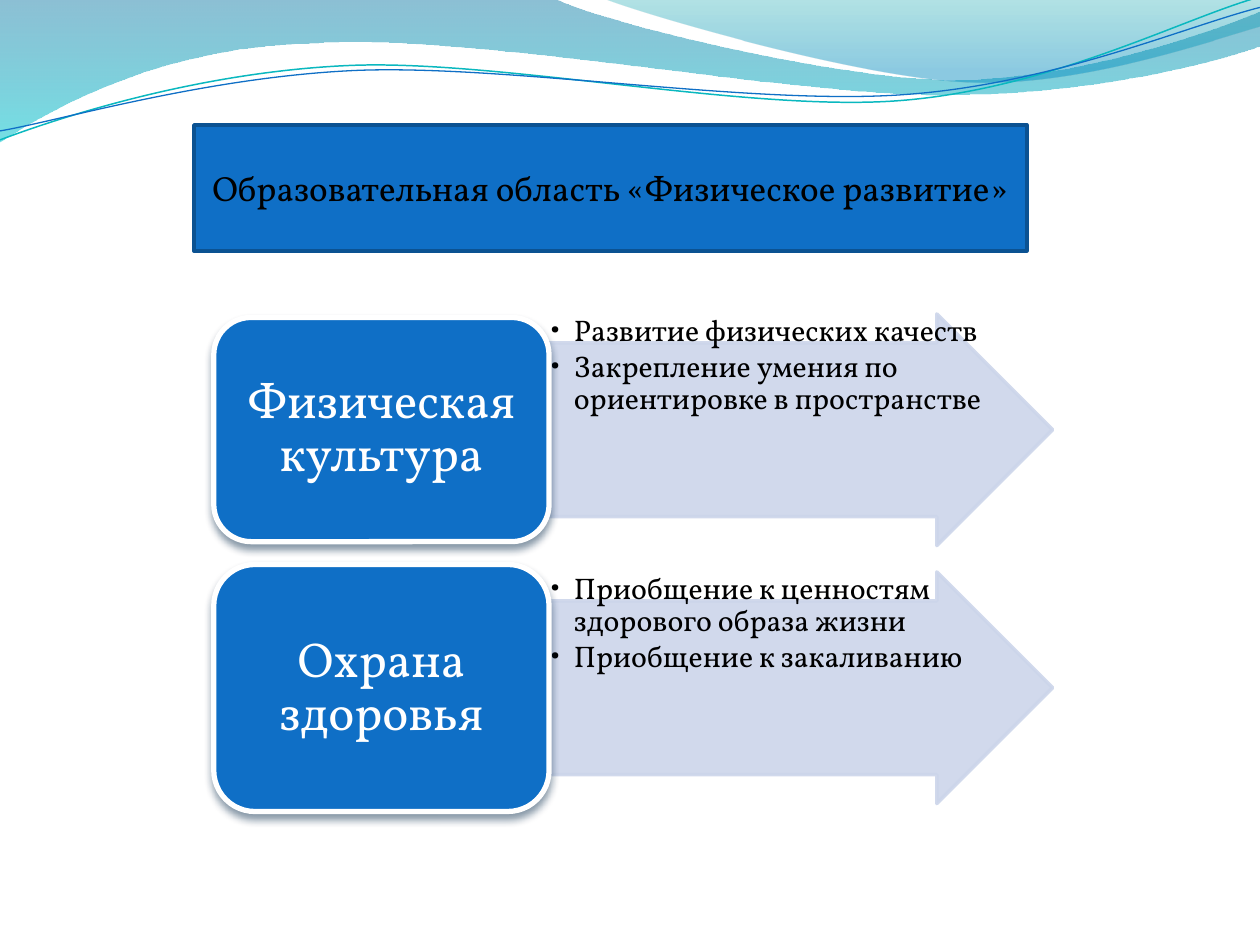
import math
import pptx
import pptx.util
import pptx.dml.color
import pptx.enum.shapes
import pptx.enum.text
import pptx.oxml
import pptx.oxml.ns
from dataclasses import dataclass

Cm = pptx.util.Cm
Pt = pptx.util.Pt
RGB = pptx.dml.color.RGBColor.from_string
Kind = pptx.enum.shapes.MSO_SHAPE
Align = pptx.enum.text.PP_ALIGN
Anchor = pptx.enum.text.MSO_ANCHOR
qn = pptx.oxml.ns.qn
space = pptx.oxml.ns.nsdecls("a")


@dataclass
class Theme:
    font: str = "Vollkorn"
    blue: str = "0F6FC6"
    edge: str = "0B5292"
    pale: str = "CCD5EA"
    teal: str = "0AB8BF"
    shade: str = "042747"
    white: str = "FFFFFF"
    black: str = "000000"
    sea: tuple = ((0, "0074A1", 45), (1, "00C6CF", 55))
    veil: tuple = ((0, "00A1A9", 30), (0.8, "008BBF", 45))
    head: int = 20
    label: int = 28
    body: int = 17


theme = Theme()


def fade(tint, alpha):
    tint.append(pptx.oxml.parse_xml(f'<a:alpha {space} val="{alpha * 1000}"/>'))


def say(para, text, size, color):
    run = para.add_run()
    run.text = text
    run.font.name = theme.font
    run.font.size = Pt(size)
    run.font.color.rgb = RGB(color)


deck = pptx.Presentation()
deck.slide_width = Cm(25.4)
deck.slide_height = Cm(19.05)
slide = deck.slides.add_slide(deck.slide_layouts[6])
shapes = slide.shapes

waves = [
    ([[(0, 0)], [(11.18, -0.03)], [(12.09, 0.43), (16.87, 1.6), (19.25, 1.6)],
      [(21.67, 1.6), (24.33, 0.66), (25.4, 0.23)], [(25.43, 0.91)],
      [(24.97, 1.12), (22.1, 1.93), (18.95, 1.91)],
      [(15.8, 1.91), (9.7, 0.71), (6.53, 0.86)],
      [(3.28, 0.91), (1.17, 2.11), (-0.03, 2.87)], [(0, 0)]],
     theme.sea, None, 0, (0, 0)),
    ([[(12.17, -0.03)], [(12.93, 0.28), (17.32, 1.57), (19.53, 1.65)],
      [(21.74, 1.75), (24.41, 0.81), (25.4, 0.53)], [(25.4, 0)], [(12.17, -0.03)]],
     theme.veil, None, 0, (0, 0)),
    ([[(0, 2.82)], [(1.22, 2.36), (4.01, 1.45), (7.04, 1.32)],
      [(10.03, 1.19), (15.06, 2.26), (18.11, 2.03)],
      [(21.16, 1.8), (23.83, 0.38), (25.35, -0.05)]],
     None, (theme.teal, 0.85), -2.7, (12.67, 1.46)),
    ([[(0, 2.64)], [(1.19, 2.44), (4.17, 1.55), (7.19, 1.42)],
      [(10.24, 1.3), (15.16, 2.13), (18.21, 1.91)],
      [(21.23, 1.7), (23.9, 0.53), (25.4, 0.15)]],
     None, (theme.blue, 0.75), -2.7, (12.69, 1.5)),
]
for parts, stops, pen, turn, (mid, rise) in waves:
    cos, sin = math.cos(math.radians(-turn)), math.sin(math.radians(-turn))
    dots = [(Cm(mid + (x - mid) * cos - (y - rise) * sin),
             Cm(rise + (x - mid) * sin + (y - rise) * cos))
            for part in parts for x, y in part]
    form = shapes.build_freeform(*dots[0])
    form.add_line_segments(dots[1:], close=bool(stops))
    wave = form.convert_to_shape()
    wave.rotation = turn
    wave.shadow.inherit = False
    steps = iter(list(wave._element.spPr.iter(qn("a:lnTo"))))
    for part in parts[1:]:
        nodes = [next(steps) for dot in part]
        if len(nodes) == 3:
            curve = pptx.oxml.parse_xml(f"<a:cubicBezTo {space}/>")
            nodes[0].addprevious(curve)
            for node in nodes:
                curve.append(node[0])
                node.getparent().remove(node)
    if stops:
        wave.line.fill.background()
        wave.fill.gradient()
        wave.fill.gradient_angle = 270
        for stop, (place, color, alpha) in zip(wave.fill.gradient_stops, stops):
            stop.position = place
            stop.color.rgb = RGB(color)
        for tint, (place, color, alpha) in zip(wave._element.spPr.iter(qn("a:srgbClr")), stops):
            fade(tint, alpha)
    else:
        wave.fill.background()
        wave.line.color.rgb = RGB(pen[0])
        wave.line.width = Pt(pen[1])

title = shapes.add_shape(Kind.RECTANGLE, Cm(3.91), Cm(2.52), Cm(16.79), Cm(2.54))
title.shadow.inherit = False
title.fill.solid()
title.fill.fore_color.rgb = RGB(theme.blue)
title.line.color.rgb = RGB(theme.edge)
title.line.width = Pt(2)
title.text_frame.vertical_anchor = Anchor.MIDDLE
para = title.text_frame.paragraphs[0]
para.alignment = Align.CENTER
say(para, "Образовательная область «Физическое развитие»", theme.head, theme.black)

rows = [
    ("Физическая культура", 6.33, 6.4, 4.52,
     ["Развитие физических качеств",
      "Закрепление умения по ориентировке в пространстве"]),
    ("Охрана здоровья", 11.53, 11.38, 4.98,
     ["Приобщение к ценностям здорового образа жизни",
      "Приобщение к закаливанию"]),
]
for name, top, rise, tall, items in rows:
    area = Cm(11.06), Cm(top), Cm(10.16), Cm(4.67)
    arrow = shapes.add_shape(Kind.RIGHT_ARROW, *area)
    arrow.adjustments[0] = 0.75
    arrow.adjustments[1] = 0.5
    arrow.shadow.inherit = False
    arrow.fill.solid()
    arrow.fill.fore_color.rgb = RGB(theme.pale)
    arrow.line.color.rgb = RGB(theme.pale)
    arrow.line.width = Pt(2)
    for tint in arrow._element.spPr.iter(qn("a:srgbClr")):
        fade(tint, 90)

    frame = shapes.add_textbox(*area).text_frame
    frame.word_wrap = True
    frame.margin_left = frame.margin_right = Cm(0.03)
    frame.margin_top = frame.margin_bottom = Cm(0.03)
    for index, item in enumerate(items):
        para = frame.add_paragraph() if index else frame.paragraphs[0]
        para.level = 1
        para.line_spacing = 0.9
        para.space_after = Pt(2.5)
        props = para._p.get_or_add_pPr()
        props.set("marL", str(Cm(0.48)))
        props.set("indent", str(-Cm(0.48)))
        props.append(pptx.oxml.parse_xml(f'<a:buFont {space} typeface="{theme.font}"/>'))
        props.append(pptx.oxml.parse_xml(f'<a:buChar {space} char="•"/>'))
        say(para, item, theme.body, theme.black)

    area = Cm(4.31), Cm(rise), Cm(6.76), Cm(tall)
    card = shapes.add_shape(Kind.ROUNDED_RECTANGLE, *area)
    card.shadow.inherit = False
    card.fill.solid()
    card.fill.fore_color.rgb = RGB(theme.blue)
    card.line.color.rgb = RGB(theme.white)
    card.line.width = Pt(3)
    glow = pptx.oxml.parse_xml(
        f'<a:outerShdw {space} blurRad="{Pt(4.5)}" dist="{Pt(3)}" '
        f'dir="5400000" rotWithShape="0"><a:srgbClr val="{theme.shade}"/></a:outerShdw>')
    fade(glow[0], 48)
    card._element.spPr.find(qn("a:effectLst")).append(glow)

    frame = shapes.add_textbox(*area).text_frame
    frame.word_wrap = True
    frame.vertical_anchor = Anchor.MIDDLE
    frame.margin_left = frame.margin_right = Cm(0.3)
    frame.margin_top = frame.margin_bottom = Cm(0.15)
    para = frame.paragraphs[0]
    para.alignment = Align.CENTER
    para.line_spacing = 0.9
    say(para, name, theme.label, theme.white)

deck.save("out.pptx")
